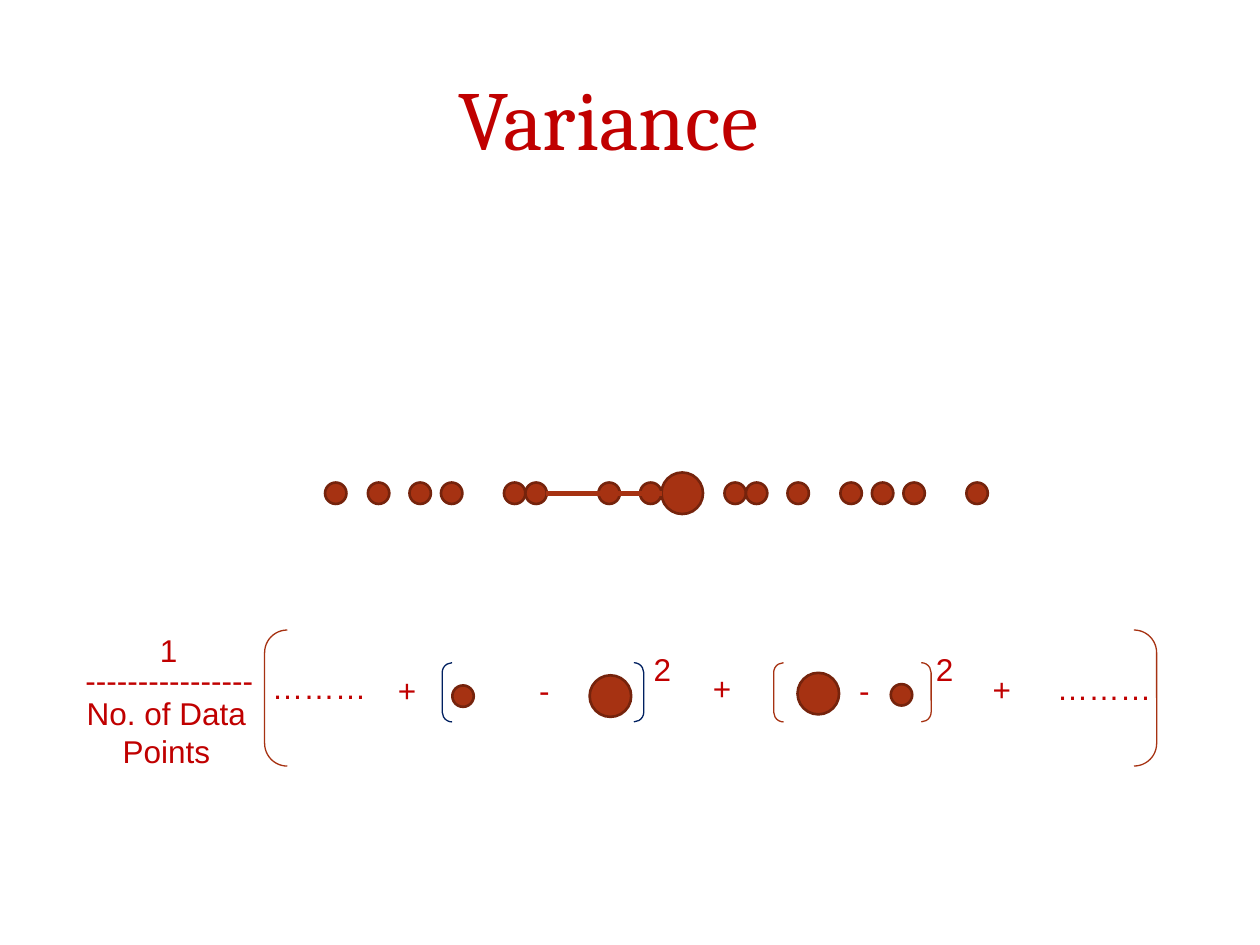
from typing import NamedTuple

from lxml.etree import SubElement
from pptx import Presentation
from pptx.dml.color import RGBColor as Rgb
from pptx.enum.shapes import MSO_CONNECTOR as Conn, MSO_SHAPE as Kind
from pptx.enum.text import MSO_ANCHOR as Anchor, MSO_AUTO_SIZE as Fit, PP_ALIGN as Align
from pptx.oxml.ns import qn
from pptx.util import Emu, Pt

PX = 9144  # 100 px to the inch
HUES = {"text": "C00000", "rust": "A63212", "edge": "75230C", "navy": "002060"}
SMALL, LARGE = 17, 33

BODY = {"name": "Arial", "size": Pt(18)}
HEAD = {"name": "Cambria", "size": Pt(48)}
LOOSE = {"word_wrap": False, "auto_size": Fit.SHAPE_TO_FIT_TEXT}
FIXED = {"word_wrap": True, "auto_size": Fit.NONE, "vertical_anchor": Anchor.MIDDLE}


class Dot(NamedTuple):
    x: int
    y: int
    size: int = SMALL


class Pair(NamedTuple):
    x: int
    y: int
    w: int
    h: int
    hue: str = "rust"


class Label(NamedTuple):
    text: str
    x: int
    y: int
    w: int
    h: int = 40
    align: Align = Align.LEFT
    font: dict = BODY
    frame: dict = LOOSE


def px(*vals: int) -> list[Emu]:
    return [Emu(val * PX) for val in vals]


def hue(key: str) -> Rgb:
    return Rgb.from_string(HUES[key])


def apply(obj, vals: dict) -> None:
    for key, val in vals.items():
        setattr(obj, key, val)


def draw_dot(page, dot: Dot) -> None:
    disc = page.shapes.add_shape(Kind.OVAL, *px(dot.x, dot.y, dot.size, dot.size))
    disc.shadow.inherit = False
    disc.fill.solid()
    disc.fill.fore_color.rgb = hue("rust")
    disc.line.color.rgb = hue("edge")
    disc.line.width = Pt(1.5)


def draw_pair(page, pair: Pair) -> None:
    mark = page.shapes.add_shape(Kind.DOUBLE_BRACKET, *px(pair.x, pair.y, pair.w, pair.h))
    mark.shadow.inherit = False
    mark.fill.background()
    mark.line.color.rgb = hue(pair.hue)
    mark.line.width = Pt(0.75)


def draw_label(page, label: Label) -> None:
    box = page.shapes.add_textbox(*px(label.x, label.y, label.w, label.h))
    frame = box.text_frame
    frame.text = label.text
    apply(frame, label.frame)
    for para in frame.paragraphs:
        para.alignment = label.align
        font = para.runs[0].font
        apply(font, label.font)
        font.color.rgb = hue("text")


def draw_line(page, x: int, y: int, end: int) -> None:
    line = page.shapes.add_connector(Conn.STRAIGHT, *px(x, y, end, y))
    line.line.color.rgb = hue("rust")
    line.line.width = Pt(2.75)
    SubElement(line._element.spPr, qn("a:effectLst"))


# Data points along the axis
POINTS = [258, 292, 325, 350, 400, 417, 475, 508,
          575, 592, 625, 667, 692, 717, 767]

# Points, means and brackets of the formula
TERMS = [Dot(359, 544), Dot(468, 536, LARGE), Dot(633, 534, LARGE), Dot(707, 543)]
PAIRS = [Pair(351, 526, 160, 47, "navy"), Pair(614, 526, 125, 47),
         Pair(210, 500, 708, 108)]

LABELS = [
    Label("Variance", 58, 30, 850, 125, Align.CENTER, HEAD, FIXED),
    # Fraction
    Label("1", 117, 496, 34),
    Label("----------------", 58, 520, 155),
    Label("No. of Data\nPoints", 58, 546, 148, 71, Align.CENTER),
    # Sum of squares
    Label("………", 206, 525, 96),
    Label("+", 306, 528, 35),
    Label("-", 418, 528, 29),
    Label("2", 509, 511, 34),
    Label("+", 556, 526, 35),
    Label("-", 672, 528, 29),
    Label("2", 733, 511, 34),
    Label("+", 778, 527, 35),
    Label("………", 829, 526, 96),
]


def main() -> None:
    deck = Presentation()
    deck.slide_width, deck.slide_height = px(1000, 750)
    page = deck.slides.add_slide(deck.slide_layouts[6])

    # Axis: data points, mean and one distance to it
    for x in POINTS:
        draw_dot(page, Dot(x, 383))
    draw_dot(page, Dot(525, 375, LARGE))
    draw_line(page, 433, 392, 525)

    # Formula and title
    for dot in TERMS:
        draw_dot(page, dot)
    for pair in PAIRS:
        draw_pair(page, pair)
    for label in LABELS:
        draw_label(page, label)

    deck.save("out.pptx")


if __name__ == "__main__":
    main()
